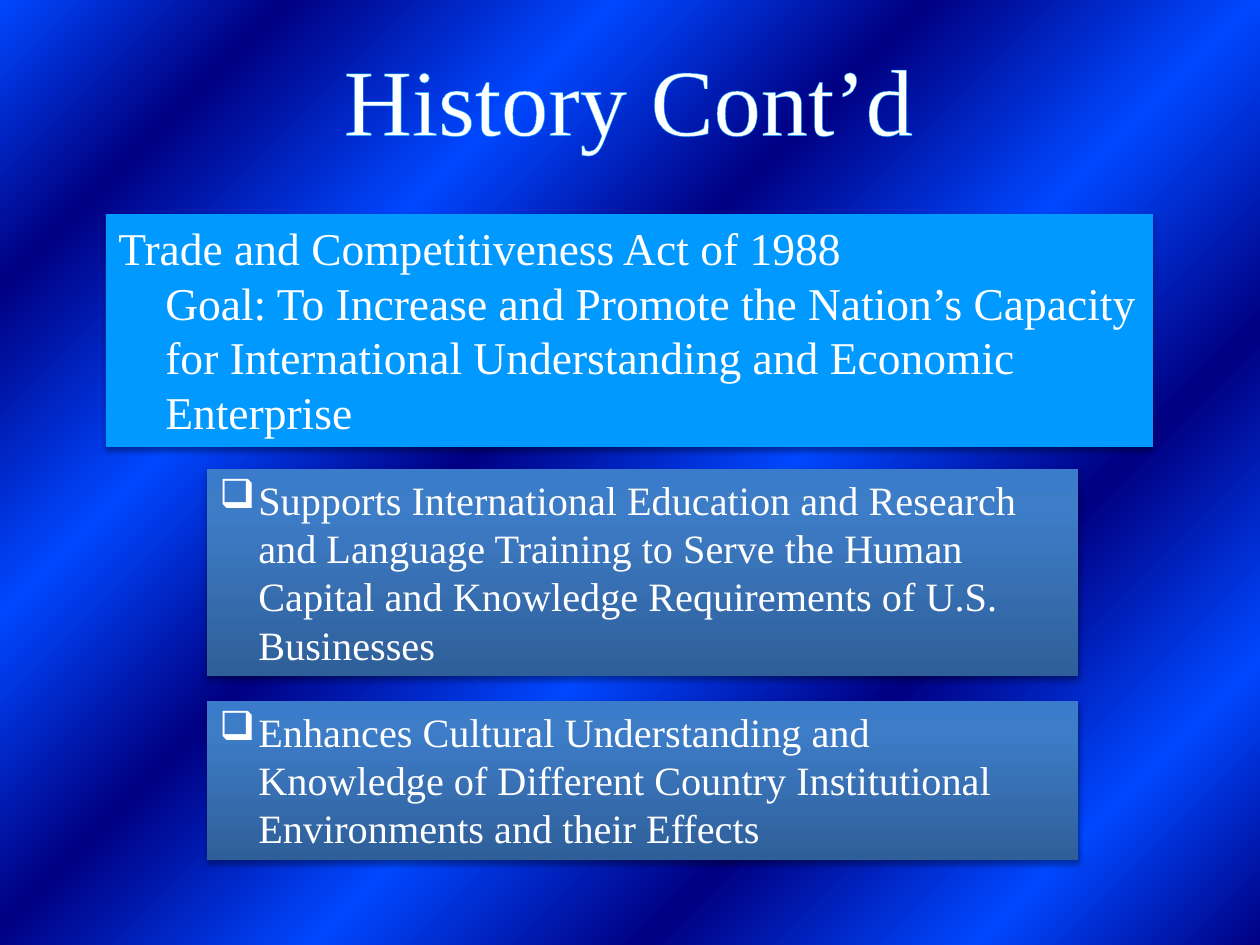
from lxml import etree
from pptx import Presentation
from pptx.dml.color import RGBColor
from pptx.enum.shapes import MSO_SHAPE
from pptx.enum.text import MSO_ANCHOR, MSO_AUTO_SIZE, PP_ALIGN
from pptx.oxml.ns import qn
from pptx.util import Pt

RECT = MSO_SHAPE.RECTANGLE
TOP = MSO_ANCHOR.TOP
GROW = MSO_AUTO_SIZE.SHAPE_TO_FIT_TEXT
LEFT, CENTER = PP_ALIGN.LEFT, PP_ALIGN.CENTER

PX = 914400 / 126
FONT = "Times New Roman"
COLORS = {
    "text": "FFFFFF",
    "accent": "0099FF",
    "navy": "000082",
    "blue": "0047FF",
    "box_dark": "2F5F99",
    "box_mid": "3D7CC7",
    "box_light": "3A7CCB",
    "shadow": "000000",
}
BAND_STOPS = [(pos, "blue" if i % 2 else "navy")
              for i, pos in enumerate([0, 13, 28, 43, 58, 72, 87, 100])]
BOX_STOPS = [(0, "box_dark"), (80, "box_mid"), (100, "box_light")]


def px(n):
    return round(n * PX)


def add(parent, tag, **attrs):
    return etree.SubElement(parent, qn(tag), {k: str(v) for k, v in attrs.items()})


class Deck:
    def __init__(self, width, height):
        self.prs = Presentation()
        self.prs.slide_width, self.prs.slide_height = px(width), px(height)
        self.slide = self.prs.slides.add_slide(self.prs.slide_layouts[6])

    def gradient(self, fill, props, stops, angle):
        """Swap a solid fill for a gradient with any number of stops."""
        fill.solid()
        solid = props.find(qn("a:solidFill"))
        grad = etree.Element(qn("a:gradFill"), rotWithShape="1")
        stop_list = add(grad, "a:gsLst")
        for pos, color in stops:
            stop = add(stop_list, "a:gs", pos=pos * 1000)
            add(stop, "a:srgbClr", val=COLORS[color])
        add(grad, "a:lin", ang=angle * 60000, scaled=0)
        props.replace(solid, grad)

    def background(self, stops, angle):
        fill = self.slide.background.fill
        fill.solid()
        props = self.slide.element.find(".//" + qn("p:bgPr"))
        self.gradient(fill, props, stops, angle)

    def set_text(self, shape, text, size, align=LEFT, indent=0, bullet=None):
        frame = shape.text_frame
        frame.text = text
        frame.word_wrap = True
        frame.auto_size = GROW
        frame.vertical_anchor = TOP
        paragraph = frame.paragraphs[0]
        paragraph.alignment = align
        if indent:
            props = paragraph._p.get_or_add_pPr()
            props.set("marL", str(px(indent)))
            props.set("indent", str(-px(indent)))
            if bullet:
                add(props, "a:buChar", char=bullet)
        for run in paragraph.runs:
            run.font.name = FONT
            run.font.size = Pt(size)
            run.font.color.rgb = RGBColor.from_string(COLORS["text"])
        return paragraph

    def title(self, box, text, size, outline):
        shape = self.slide.shapes.add_textbox(*map(px, box))
        paragraph = self.set_text(shape, text, size, CENTER)
        for run in paragraph.runs:
            line = etree.Element(qn("a:ln"), w=str(Pt(outline)))
            add(add(line, "a:solidFill"), "a:srgbClr", val=COLORS["accent"])
            run._r.get_or_add_rPr().insert(0, line)

    def panel(self, box, text, size, indent, color=None, stops=None, bullet=None):
        shape = self.slide.shapes.add_shape(RECT, *map(px, box))
        props = shape._element.spPr
        if stops:
            self.gradient(shape.fill, props, stops, 270)
        else:
            shape.fill.solid()
            shape.fill.fore_color.rgb = RGBColor.from_string(COLORS[color])
        shape.line.fill.background()
        self.shadow(shape, props)
        self.set_text(shape, text, size, indent=indent, bullet=bullet)

    def shadow(self, shape, props):
        shape.shadow.inherit = False
        outer = add(props.find(qn("a:effectLst")), "a:outerShdw", blurRad=Pt(3.1),
                    dist=Pt(1.8), dir=90 * 60000, rotWithShape=0)
        shade = add(outer, "a:srgbClr", val=COLORS["shadow"])
        add(shade, "a:alpha", val=35000)


def main():
    deck = Deck(1260, 945)
    deck.background(BAND_STOPS, 225)

    # Title
    deck.title((291, 35, 675, 128), "History Cont’d", 54, outline=1.45)

    # The act and its goal
    deck.panel((106, 214, 1047, 233),
               "Trade and Competitiveness Act of 1988\v"
               "Goal: To Increase and Promote the Nation’s Capacity for "
               "International Understanding and Economic Enterprise",
               26, indent=47, color="accent")

    # What the act does
    effects = [
        (469, 207, "Supports International Education and Research and Language "
                   "Training to Serve the Human Capital and Knowledge "
                   "Requirements of U.S. Businesses"),
        (701, 159, "Enhances Cultural Understanding and Knowledge of Different "
                   "Country Institutional Environments and their Effects"),
    ]
    for top, height, effect in effects:
        deck.panel((207, top, 871, height), effect, 23, indent=39,
                   stops=BOX_STOPS, bullet="❑")

    deck.prs.save("out.pptx")


if __name__ == "__main__":
    main()
